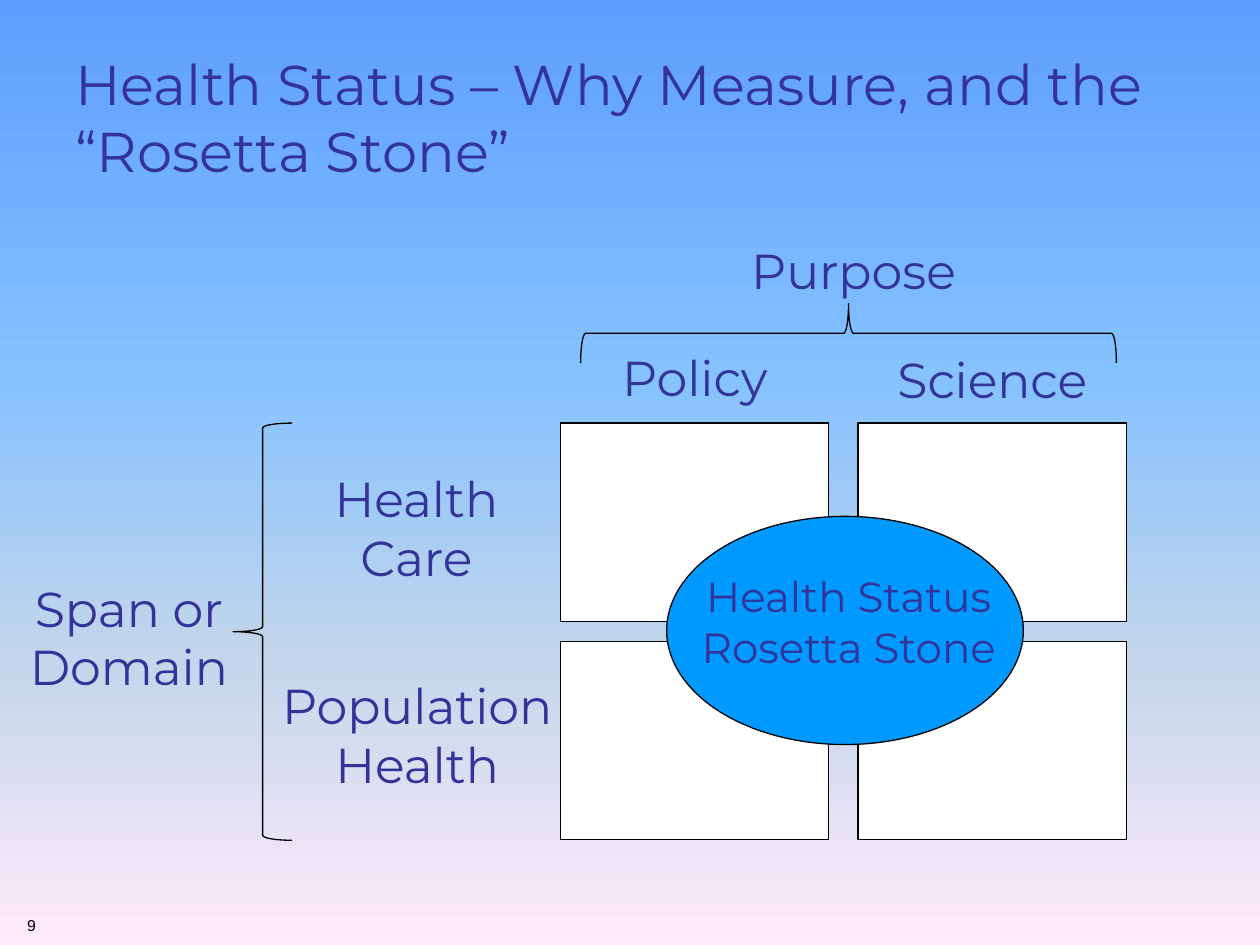
"""Build the health status slide with its purpose-by-domain grid."""
from lxml.etree import SubElement
from pptx import Presentation
from pptx.dml.color import RGBColor
from pptx.enum.shapes import MSO_SHAPE as Shape
from pptx.enum.text import MSO_ANCHOR as Anchor, PP_ALIGN as Align
from pptx.oxml.ns import qn
from pptx.util import Cm, Pt

COLORS = {
    "text": "333399",
    "black": "000000",
    "white": "FFFFFF",
    "ellipse": "0099FF",
}
BACKGROUND_STOPS = {0: "5E9EFF", 40: "85C2FF", 70: "C4D6EB", 100: "FFEBFA"}


def add_text(page, text, place, size, align=Align.CENTER, anchor=Anchor.TOP,
             font="Montserrat", color="text"):
    box = page.shapes.add_textbox(*map(Cm, place))
    frame = box.text_frame
    frame.word_wrap = True
    frame.vertical_anchor = anchor
    para = frame.paragraphs[0]
    para.text = text
    para.alignment = align
    para.font.size = Pt(size)
    para.font.name = font
    para.font.color.rgb = RGBColor.from_string(COLORS[color])


def add_outlined(page, kind, place, fill=None):
    shape = page.shapes.add_shape(kind, *map(Cm, place))
    shape.shadow.inherit = False
    shape.line.color.rgb = RGBColor.from_string(COLORS["black"])
    shape.line.width = Pt(0.75)
    if fill:
        shape.fill.solid()
        shape.fill.fore_color.rgb = RGBColor.from_string(COLORS[fill])
    else:
        shape.fill.background()
    return shape


deck = Presentation()
deck.slide_width, deck.slide_height = Cm(25.4), Cm(19.05)
page = deck.slides.add_slide(deck.slide_layouts[6])

background = page.background.fill
background.gradient()
background.gradient_angle = 270
stop_list = next(page.element.iter(qn("a:gsLst")))
for stop in list(stop_list):
    stop_list.remove(stop)
for percent, color in BACKGROUND_STOPS.items():
    stop = SubElement(stop_list, qn("a:gs"), pos=str(percent * 1000))
    SubElement(stop, qn("a:srgbClr"), val=color)

add_text(page, "Health Status – Why Measure, and the “Rosetta Stone”",
         (1.27, 0.76, 22.86, 3.18), 32, Align.LEFT, Anchor.MIDDLE)
add_text(page, "9", (0.3, 18.34, 4.22, 0.61), 9, Align.LEFT, Anchor.MIDDLE,
         "Arial", "black")

add_outlined(page, Shape.LEFT_BRACE, (4.7, 8.53, 1.19, 8.41))
purpose_brace = add_outlined(page, Shape.LEFT_BRACE, (16.51, 1.32, 1.19, 10.8))
purpose_brace.rotation = 90

for top in (8.53, 12.93):
    for left in (11.3, 17.3):
        add_outlined(page, Shape.RECTANGLE, (left, top, 5.41, 4), "white")

LABELS = [
    ("Purpose", (14.5, 4.72, 5.41, 1.45)),
    ("Policy", (11.91, 6.88, 4.19, 1.45)),
    ("Science", (17.3, 6.93, 5.41, 1.45)),
    ("Span or Domain", (0.1, 11.53, 5, 2.64)),
    ("Health Care", (5.69, 9.32, 5.41, 2.64)),
    ("Population Health", (5.11, 13.49, 6.6, 2.64)),
]
for label, place in LABELS:
    add_text(page, label, place, 28)

add_outlined(page, Shape.OVAL, (13.44, 10.41, 7.19, 4.6), "ellipse")
add_text(page, "Health Status Rosetta Stone", (13.11, 11.38, 8, 2.31), 24)

deck.save("out.pptx")
